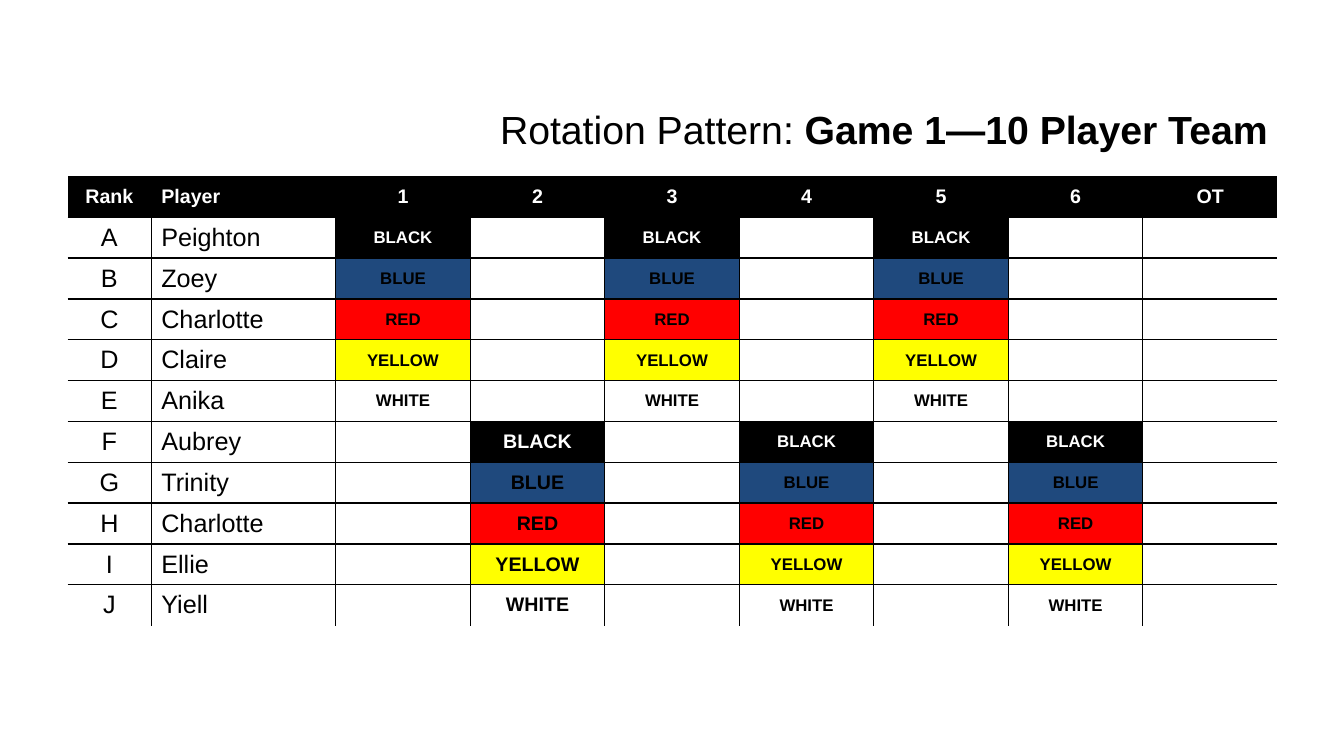
from lxml.etree import SubElement
from pptx import Presentation
from pptx.dml.color import RGBColor
from pptx.enum.text import MSO_ANCHOR, MSO_AUTO_SIZE, PP_ALIGN
from pptx.oxml.ns import qn
from pptx.util import Inches, Pt

BLACK = RGBColor(0x00, 0x00, 0x00)
WHITE = RGBColor(0xFF, 0xFF, 0xFF)
BLUE = RGBColor(0x1F, 0x49, 0x7D)
RED = RGBColor(0xFF, 0x00, 0x00)
YELLOW = RGBColor(0xFF, 0xFF, 0x00)

POSITIONS = [("BLACK", BLACK), ("BLUE", BLUE), ("RED", RED),
             ("YELLOW", YELLOW), ("WHITE", WHITE)]
PLAYERS = ["Peighton", "Zoey", "Charlotte", "Claire", "Anika",
           "Aubrey", "Trinity", "Charlotte", "Ellie", "Yiell"]
PERIODS = range(1, 7)
HEADINGS = ["Rank", "Player", *map(str, PERIODS), "OT"]
RANK_WIDTH, PLAYER_WIDTH, TABLE_WIDTH = 0.83, 1.83, 12
TABLE_HEIGHT = 4.46


class RotationSlide:
    font_name = "Arial"
    border_width = Pt(1)

    def __init__(self, presentation):
        self.slide = presentation.slides.add_slide(presentation.slide_layouts[6])

    def style(self, font, size, bold=None, color=BLACK):
        font.name = self.font_name
        font.size = Pt(size)
        font.bold = bold
        font.color.rgb = color

    def title(self, lead, emphasis, left, top, width, height):
        box = self.slide.shapes.add_textbox(
            Inches(left), Inches(top), Inches(width), Inches(height))
        frame = box.text_frame
        frame.word_wrap = True
        frame.auto_size = MSO_AUTO_SIZE.SHAPE_TO_FIT_TEXT
        heading = frame.paragraphs[0]
        heading.alignment = PP_ALIGN.RIGHT
        self.style(heading.font, 28)
        for wording, bold in ((lead, False), (emphasis, True)):
            run = heading.add_run()
            run.text = wording
            run.font.bold = bold

    def table(self, rows, columns, left, top, widths, height):
        roster = self.slide.shapes.add_table(
            rows, columns, Inches(left), Inches(top),
            Inches(sum(widths)), Inches(height)).table
        roster.first_row = False
        roster.horz_banding = False
        for column, width in zip(roster.columns, widths):
            column.width = Inches(width)
        for row in roster.rows:
            row.height = Inches(height / rows)
        for row in range(rows):
            for column in range(columns):
                self.borders(roster.cell(row, column), {
                    "L": column > 0, "R": column < columns - 1,
                    "T": row > 0, "B": row < rows - 1})
        return roster

    def borders(self, cell, sides):
        properties = cell._tc.get_or_add_tcPr()
        for side, drawn in sides.items():
            line = SubElement(properties, qn(f"a:ln{side}"), w=str(self.border_width))
            if drawn:
                fill = SubElement(line, qn("a:solidFill"))
                SubElement(fill, qn("a:srgbClr"), val=str(BLACK))
            else:
                SubElement(line, qn("a:noFill"))

    def cell(self, cell, wording="", fill=WHITE, size=18, bold=False,
             color=BLACK, alignment=PP_ALIGN.CENTER):
        cell.fill.solid()
        cell.fill.fore_color.rgb = fill
        cell.vertical_anchor = MSO_ANCHOR.MIDDLE
        cell.text = wording
        entry = cell.text_frame.paragraphs[0]
        entry.alignment = alignment
        self.style(entry.font, size, bold, color)


def main():
    presentation = Presentation()
    presentation.slide_width = Inches(13.33)
    presentation.slide_height = Inches(7.5)
    page = RotationSlide(presentation)

    period_count = len(HEADINGS) - 2
    period_width = (TABLE_WIDTH - RANK_WIDTH - PLAYER_WIDTH) / period_count
    widths = [RANK_WIDTH, PLAYER_WIDTH] + [period_width] * period_count
    roster = page.table(len(PLAYERS) + 1, len(HEADINGS), 0.67, 1.75,
                        widths, TABLE_HEIGHT)

    for column, heading in enumerate(HEADINGS):
        alignment = PP_ALIGN.LEFT if heading == "Player" else PP_ALIGN.CENTER
        page.cell(roster.cell(0, column), heading, BLACK, 14, True, WHITE, alignment)

    for index, player in enumerate(PLAYERS):
        row = index + 1
        group, place = divmod(index, len(POSITIONS))
        position, shade = POSITIONS[place]
        page.cell(roster.cell(row, 0), "ABCDEFGHIJ"[index])
        page.cell(roster.cell(row, 1), player, alignment=PP_ALIGN.LEFT)
        for period in PERIODS:
            period_cell = roster.cell(row, period + 1)
            if period % 2 != group:
                page.cell(period_cell, position, shade, 14 if period == 2 else 12,
                          True, WHITE if shade == BLACK else BLACK)
            else:
                page.cell(period_cell)
        page.cell(roster.cell(row, len(HEADINGS) - 1))

    page.title("Rotation Pattern:", " Game 1—10 Player Team", 3.92, 1, 8.75, 0.57)
    presentation.save("out.pptx")


if __name__ == "__main__":
    main()
